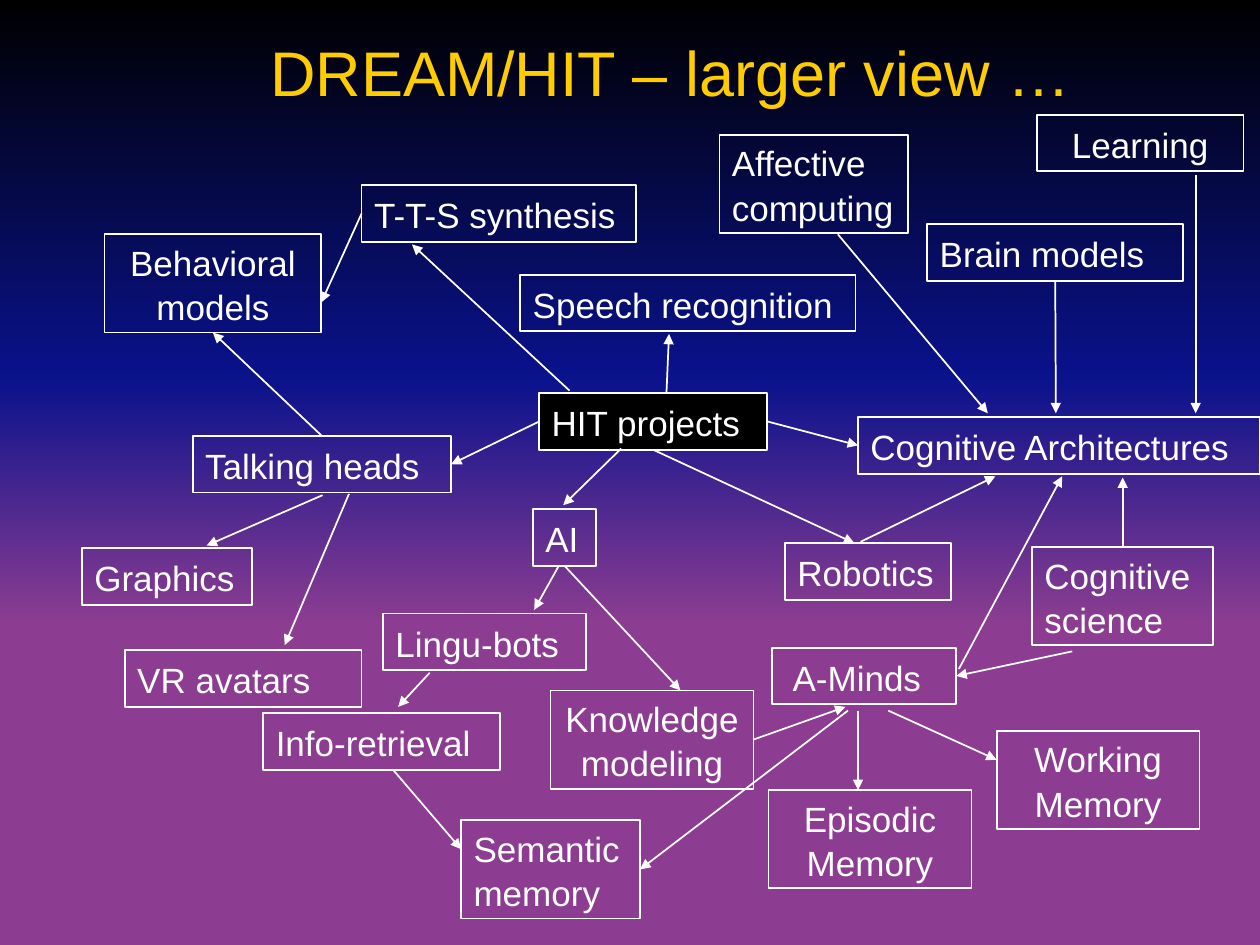
from lxml import etree
from pptx import Presentation
from pptx.dml.color import RGBColor
from pptx.enum.shapes import MSO_CONNECTOR, MSO_SHAPE
from pptx.enum.text import MSO_ANCHOR, PP_ALIGN
from pptx.oxml import parse_xml
from pptx.oxml.ns import nsdecls, qn
from pptx.util import Inches, Pt

COLOURS = {
    "black": "000000",
    "blue": "0A128C",
    "purple": "8C3D91",
    "white": "FFFFFF",
    "yellow": "FFCC00",
    "grey": "808080",
}
BACKGROUND_STOPS = [(0, "black"), (40, "blue"), (66, "purple"), (100, "purple")]
FONT = "Arial"
CELL = 0.1  # inches: the slide is a grid of 100 columns by 75 rows
ONE_LINE, TWO_LINES = 4.5, 7.8  # box heights in rows
TOP, LEFT, BOTTOM, RIGHT = range(4)
JUSTIFY, CENTER = PP_ALIGN.JUSTIFY, PP_ALIGN.CENTER

# text, column, row, columns wide, rows high, alignment
BOXES = [
    ("HIT projects", 42.8, 31.2, 18.1, ONE_LINE, JUSTIFY),
    ("T-T-S synthesis", 28.7, 14.7, 21.8, ONE_LINE, JUSTIFY),
    ("Speech recognition", 41.3, 21.8, 26.6, ONE_LINE, JUSTIFY),
    ("Talking heads", 15.3, 34.6, 20.5, ONE_LINE, JUSTIFY),
    ("Behavioral\nmodels", 8.3, 18.6, 17.2, TWO_LINES, CENTER),
    ("Graphics", 6.5, 43.5, 13.5, ONE_LINE, JUSTIFY),
    ("Cognitive Architectures", 68.1, 33.1, 31.9, ONE_LINE, JUSTIFY),
    ("Cognitive science", 81.9, 43.4, 14.4, TWO_LINES, JUSTIFY),
    ("AI", 42.3, 40.4, 5, ONE_LINE, JUSTIFY),
    (" A-Minds", 61.3, 51.4, 14.6, ONE_LINE, JUSTIFY),
    ("Lingu-bots", 30.4, 48.7, 16.1, ONE_LINE, JUSTIFY),
    ("Knowledge\nmodeling", 43.7, 54.8, 16.1, TWO_LINES, CENTER),
    ("Info-retrieval", 20.9, 56.6, 18.8, ONE_LINE, JUSTIFY),
    ("VR avatars", 9.9, 51.6, 18.8, ONE_LINE, JUSTIFY),
    ("Robotics", 62.3, 43.1, 13.2, ONE_LINE, JUSTIFY),
    ("Brain models", 73.6, 17.8, 20.3, ONE_LINE, JUSTIFY),
    ("Affective \ncomputing", 57.1, 10.7, 15, TWO_LINES, JUSTIFY),
    ("Episodic\nMemory", 61, 62.7, 16.1, TWO_LINES, CENTER),
    ("Semantic memory", 36.6, 65.1, 14.2, TWO_LINES, JUSTIFY),
    ("Working\nMemory", 79.1, 58, 16.1, TWO_LINES, CENTER),
    ("Learning", 82.3, 9.1, 16.4, ONE_LINE, CENTER),
]

# Each end is a (column, row) point, or a (box, side) pair to join.
ARROWS = [
    ((52.9, 31.1), (53.1, 26.5)),
    ((45.2, 31), (32.7, 19.4)),
    (("T-T-S synthesis", LEFT), (25.5, 24)),
    (("HIT projects", LEFT), ("Talking heads", RIGHT)),
    ((25.6, 39.3), (16.4, 43.3)),
    (("HIT projects", RIGHT), ("Cognitive Architectures", LEFT)),
    (("HIT projects", BOTTOM), (67.8, 43.1)),
    ((49.3, 35.6), (44.7, 40.1)),
    ((85.1, 51.7), ("A-Minds", RIGHT)),
    ((44.3, 45), (42.4, 48.4)),
    (("Cognitive science", TOP), (89.1, 37.9)),
    ((34.1, 53.4), (31.6, 56.1)),
    ((27.7, 39.2), (22.6, 51.2)),
    (("Talking heads", TOP), ("Behavioral models", BOTTOM)),
    (("AI", BOTTOM), (54, 54.8)),
    (("Knowledge modeling", RIGHT), (67.1, 56.1)),
    ((68.3, 43), (79, 37.8)),
    ((76.1, 53.1), (84.3, 37.8)),
    (("Brain models", BOTTOM), (83.8, 32.8)),
    ((66.5, 18.6), (78.4, 32.8)),
    ((70.5, 56.4), (79.1, 60.3)),
    ((31.2, 61.1), (36.6, 67.4)),
    ((68.1, 56.4), (68.1, 62.7)),
    ((67.3, 56.4), ("Semantic memory", RIGHT)),
    ((94.9, 13.9), (94.9, 32.8)),
]


def colour(name):
    return RGBColor.from_string(COLOURS[name])


def grid(*cells):
    return [Inches(round(cell * CELL, 2)) for cell in cells]


def paint_background(slide):
    fill = slide.background.fill
    fill.gradient()
    fill.gradient_angle = 270
    stops = next(slide.element.iter(qn("a:gsLst")))
    for stop in list(stops):
        stops.remove(stop)
    for percent, name in BACKGROUND_STOPS:
        stops.append(parse_xml(
            f'<a:gs {nsdecls("a")} pos="{percent * 1000}">'
            f'<a:srgbClr val="{COLOURS[name]}"/></a:gs>'))


def add_text(paragraph, text, size, name):
    """Add one run per line of text, with line breaks between them."""
    runs = []
    for index, line in enumerate(text.split("\n")):
        if index:
            paragraph.add_line_break()
        run = paragraph.add_run()
        run.text = line
        run.font.name = FONT
        run.font.size = Pt(size)
        run.font.color.rgb = colour(name)
        runs.append(run)
    return runs


def add_title(slide, text):
    title = slide.shapes.title
    title.left, title.top, title.width, title.height = grid(11.4, 1.3, 85, 8.7)
    title.text_frame.vertical_anchor = MSO_ANCHOR.MIDDLE
    paragraph = title.text_frame.paragraphs[0]
    paragraph.alignment = CENTER
    run = add_text(paragraph, text, 36, "yellow")[0]
    shadow = parse_xml(
        f'<a:effectLst {nsdecls("a")}><a:outerShdw dist="35921" dir="2700000">'
        f'<a:srgbClr val="{COLOURS["grey"]}"/></a:outerShdw></a:effectLst>')
    run.font.fill  # the effect follows the fill in the run's properties
    run.font._element.find(qn("a:solidFill")).addnext(shadow)


def add_box(slide, text, column, row, columns, rows, alignment):
    box = slide.shapes.add_shape(
        MSO_SHAPE.RECTANGLE, *grid(column, row, columns, rows))
    box.shadow.inherit = False
    box.fill.background()
    box.line.color.rgb = colour("white")
    box.line.width = Pt(1)
    frame = box.text_frame
    frame.word_wrap = True
    frame.vertical_anchor = MSO_ANCHOR.MIDDLE
    paragraph = frame.paragraphs[0]
    paragraph.alignment = alignment
    paragraph.line_spacing = 1.05
    add_text(paragraph, text, 20, "white")
    return box


def add_arrow(slide, boxes, start, end):
    points = [(0, 0) if isinstance(place[0], str) else grid(*place)
              for place in (start, end)]
    arrow = slide.shapes.add_connector(
        MSO_CONNECTOR.STRAIGHT, *points[0], *points[1])
    for place, connect in ((start, arrow.begin_connect), (end, arrow.end_connect)):
        if isinstance(place[0], str):
            connect(boxes[place[0]], place[1])
    arrow.line.color.rgb = colour("white")
    arrow.line.width = Pt(1)
    etree.SubElement(arrow.line._get_or_add_ln(), qn("a:tailEnd"), type="triangle")
    etree.SubElement(arrow._element.spPr, qn("a:effectLst"))


def main():
    presentation = Presentation()
    presentation.slide_width, presentation.slide_height = grid(100, 75)
    slide = presentation.slides.add_slide(presentation.slide_layouts[5])
    paint_background(slide)
    add_title(slide, "DREAM/HIT – larger view … ")
    boxes = {" ".join(box[0].split()): add_box(slide, *box) for box in BOXES}
    hub = boxes["HIT projects"]
    hub.fill.solid()
    hub.fill.fore_color.rgb = colour("black")
    for start, end in ARROWS:
        add_arrow(slide, boxes, start, end)
    presentation.save("out.pptx")


if __name__ == "__main__":
    main()
